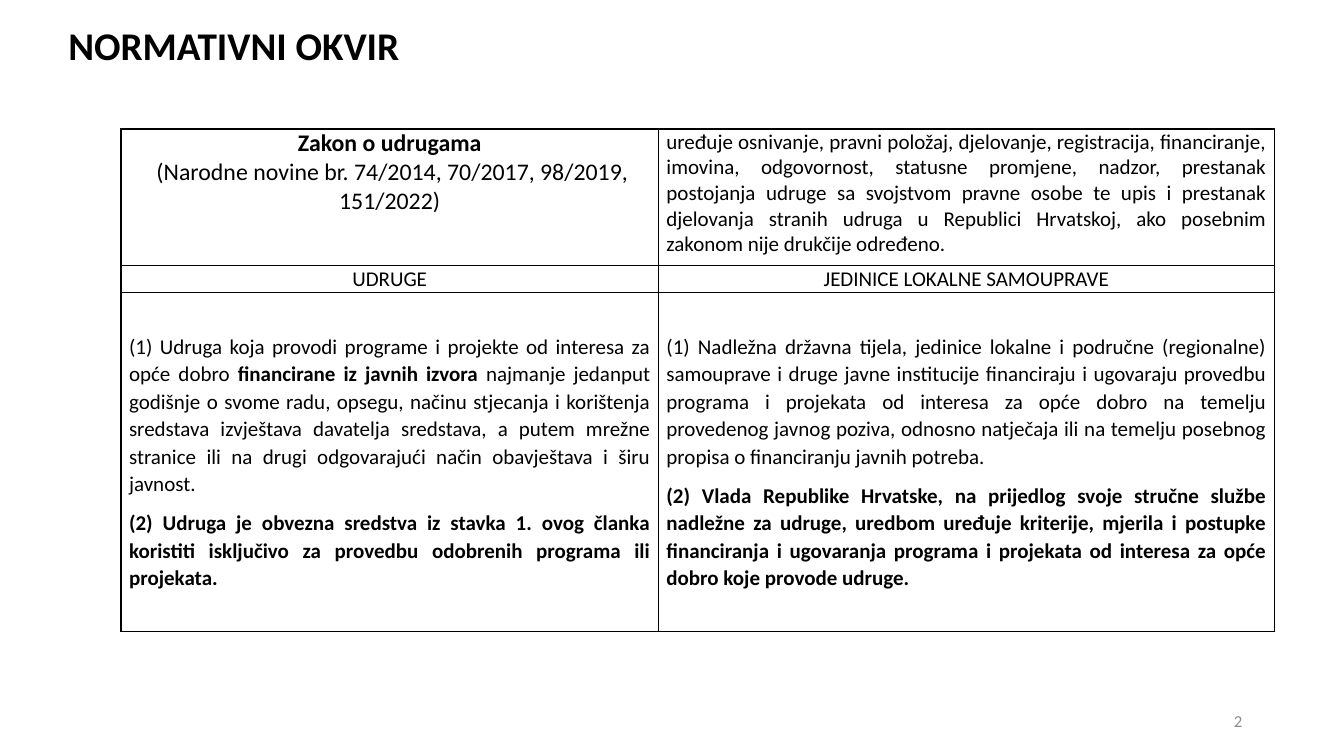
import pptx
import pptx.util
import pptx.dml.color
import pptx.enum.text
import pptx.oxml
import pptx.oxml.ns

Inches = pptx.util.Inches
Pt = pptx.util.Pt
Align = pptx.enum.text.PP_ALIGN
Anchor = pptx.enum.text.MSO_ANCHOR

FONT = "Calibri"
BLACK = "000000"
GREY = "8C8C8C"
COLUMN_WIDTHS = (5.33, 6.11)
ROW_HEIGHTS = (1.35, 0.25, 3.36)

# Each paragraph is a list of (text, bold) runs.
LAW = [
    [("Zakon o udrugama", True)],
    [(" (Narodne novine br. 74/2014, 70/2017, 98/2019, 151/2022)", False)],
]
LAW_SCOPE = [[(
    "uređuje osnivanje, pravni položaj, djelovanje, registracija, financiranje, "
    "imovina, odgovornost, statusne promjene, nadzor, prestanak postojanja udruge "
    "sa svojstvom pravne osobe te upis i prestanak djelovanja stranih udruga u "
    "Republici Hrvatskoj, ako posebnim zakonom nije drukčije određeno.", False)]]
ASSOCIATION_DUTIES = [
    [("(1) Udruga koja provodi programe i projekte od interesa za opće dobro ", False),
     ("financirane iz javnih izvora ", True),
     ("najmanje jedanput godišnje o svome radu, opsegu, načinu stjecanja i korištenja "
      "sredstava izvještava davatelja sredstava, a putem mrežne stranice ili na drugi "
      "odgovarajući način obavještava i širu javnost.", False)],
    [("(2) Udruga je obvezna sredstva iz stavka 1. ovog članka koristiti isključivo "
      "za provedbu odobrenih programa ili projekata.", True)],
]
AUTHORITY_DUTIES = [
    [("(1) Nadležna državna tijela, jedinice lokalne i područne (regionalne) samouprave "
      "i druge javne institucije financiraju i ugovaraju provedbu programa i projekata "
      "od interesa za opće dobro na temelju provedenog javnog poziva, odnosno natječaja "
      "ili na temelju posebnog propisa o financiranju javnih potreba.", False)],
    [("(2) Vlada Republike Hrvatske, na prijedlog svoje stručne službe nadležne za "
      "udruge, uredbom uređuje kriterije, mjerila i postupke financiranja i ugovaranja "
      "programa i projekata od interesa za opće dobro koje provode udruge.", True)],
]


def rgb(color):
    return pptx.dml.color.RGBColor.from_string(color)


def write_paragraphs(frame, paragraphs, size, align, color=BLACK, spacing=1.0, after=0):
    for index, runs in enumerate(paragraphs):
        para = frame.add_paragraph() if index else frame.paragraphs[0]
        para.alignment = align
        para.line_spacing = spacing
        para.space_after = Pt(after)
        for text, bold in runs:
            span = para.add_run()
            span.text = text
            span.font.name = FONT
            span.font.size = Pt(size)
            span.font.bold = bold
            span.font.color.rgb = rgb(color)


def add_text(page, left, top, width, height, text, size, bold, align, color, spacing=1.0):
    box = page.shapes.add_textbox(Inches(left), Inches(top), Inches(width), Inches(height))
    box.text_frame.word_wrap = True
    box.text_frame.vertical_anchor = Anchor.MIDDLE
    write_paragraphs(box.text_frame, [[(text, bold)]], size, align, color, spacing)


def add_borders(cell, color=BLACK, width=1):
    properties = cell._tc.get_or_add_tcPr()
    for position, side in enumerate(("lnL", "lnR", "lnT", "lnB")):
        properties.insert(position, pptx.oxml.parse_xml(
            f'<a:{side} {pptx.oxml.ns.nsdecls("a")} w="{Pt(width)}"><a:solidFill>'
            f'<a:srgbClr val="{color}"/></a:solidFill></a:{side}>'))


def fill_cell(cell, paragraphs, size, align, anchor=Anchor.TOP, spacing=1.0, after=0):
    cell.margin_left = cell.margin_right = Inches(0.08)
    cell.margin_top = cell.margin_bottom = 0
    cell.vertical_anchor = anchor
    cell.fill.background()
    add_borders(cell)
    write_paragraphs(cell.text_frame, paragraphs, size, align, spacing=spacing, after=after)


def add_law_table(page):
    frame = page.shapes.add_table(
        len(ROW_HEIGHTS), len(COLUMN_WIDTHS), Inches(1.2), Inches(1.28),
        Inches(sum(COLUMN_WIDTHS)), Inches(sum(ROW_HEIGHTS)))
    table = frame.table
    table.first_row = table.horz_banding = False
    for column, width in zip(table.columns, COLUMN_WIDTHS):
        column.width = Inches(width)
    for row, height in zip(table.rows, ROW_HEIGHTS):
        row.height = Inches(height)

    fill_cell(table.cell(0, 0), LAW, 17, Align.CENTER)
    fill_cell(table.cell(0, 1), LAW_SCOPE, 15, Align.JUSTIFY)
    for column, heading in enumerate(("UDRUGE", "JEDINICE LOKALNE SAMOUPRAVE")):
        fill_cell(table.cell(1, column), [[(heading, False)]], 15, Align.CENTER,
                  spacing=1.07, after=8)
    for column, duties in enumerate((ASSOCIATION_DUTIES, AUTHORITY_DUTIES)):
        fill_cell(table.cell(2, column), duties, 15, Align.JUSTIFY, Anchor.MIDDLE,
                  spacing=1.07, after=8)


def main():
    deck = pptx.Presentation()
    deck.slide_width = Inches(13.33)
    deck.slide_height = Inches(7.5)
    page = deck.slides.add_slide(deck.slide_layouts[6])
    add_law_table(page)
    add_text(page, 0.58, 0.27, 11.98, 0.4, "NORMATIVNI OKVIR", 28, True,
             Align.LEFT, BLACK, spacing=0.9)
    add_text(page, 9.42, 6.95, 3, 0.4, "2", 12, False, Align.RIGHT, GREY)
    deck.save("out.pptx")


if __name__ == "__main__":
    main()
